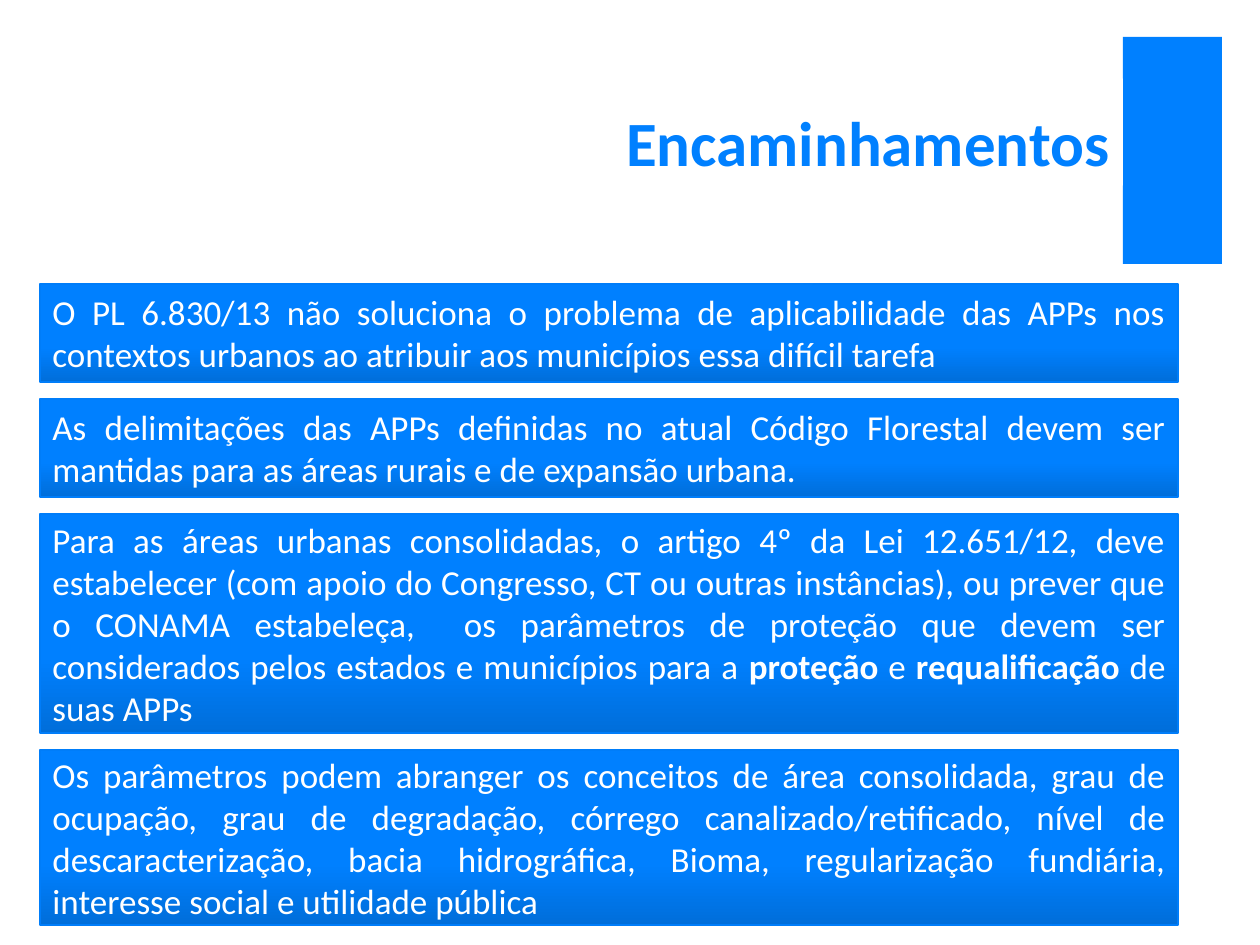
from pptx import Presentation
from pptx.dml.color import RGBColor
from pptx.enum.shapes import MSO_SHAPE
from pptx.enum.text import MSO_ANCHOR, PP_ALIGN
from pptx.util import Emu, Pt

RECT = MSO_SHAPE.RECTANGLE
BOTTOM, MIDDLE = MSO_ANCHOR.BOTTOM, MSO_ANCHOR.MIDDLE
RIGHT, JUSTIFY = PP_ALIGN.RIGHT, PP_ALIGN.JUSTIFY

BLUE = RGBColor(0x00, 0x80, 0xFF)
DARK_BLUE = RGBColor(0x00, 0x6E, 0xDA)
EDGE_BLUE = RGBColor(0x00, 0x7D, 0xF9)
WHITE = RGBColor(0xFF, 0xFF, 0xFF)

TITLE = "Encaminhamentos"
STATEMENTS = [
    (98, [("O PL 6.830/13 não soluciona o problema de aplicabilidade das APPs nos "
           "contextos urbanos ao atribuir aos municípios essa difícil tarefa", False)]),
    (98, [("As delimitações das APPs definidas no atual Código Florestal devem ser "
           "mantidas para as áreas rurais e de expansão urbana. ", False)]),
    (219, [("Para as áreas urbanas consolidadas, o artigo 4º da Lei 12.651/12, deve "
            "estabelecer (com apoio do Congresso, CT ou outras instâncias), ou prever que "
            "o CONAMA estabeleça,  os parâmetros de proteção que devem ser considerados "
            "pelos estados e municípios para a ", False),
           ("proteção", True),
           (" e ", False),
           ("requalificação", True),
           (" de suas APPs", False)]),
    (175, [("Os parâmetros podem abranger os conceitos de área consolidada, grau de "
            "ocupação, grau de degradação, córrego canalizado/retificado, nível de "
            "descaracterização, bacia hidrográfica, Bioma, regularização fundiária, "
            "interesse social e utilidade pública", False)]),
]
LEFT, TOP, WIDTH, GAP = 40, 284, 1138, 17


def px(n):
    return Emu(round(n * 914400 / 126))


def add_box(slide, x, y, w, h):
    sp = slide.shapes.add_shape(RECT, px(x), px(y), px(w), px(h))
    sp.shadow.inherit = False
    return sp


def add_text(sp, runs, size, color, align, anchor):
    tf = sp.text_frame
    tf.word_wrap = True
    tf.vertical_anchor = anchor
    p = tf.paragraphs[0]
    p.alignment = align
    for text, bold in runs:
        r = p.add_run()
        r.text = text
        r.font.name = "Calibri"
        r.font.size = Pt(size)
        r.font.bold = bold
        r.font.color.rgb = color


def shade(sp):
    sp.fill.gradient()
    sp.fill.gradient_angle = 90
    stops = sp.fill.gradient_stops
    for stop, position, color in zip(stops, (0, 0.35), (DARK_BLUE, BLUE)):
        stop.position = position
        stop.color.rgb = color
    sp.line.color.rgb = EDGE_BLUE
    sp.line.width = Pt(1)


def main():
    prs = Presentation()
    prs.slide_width, prs.slide_height = px(1260), px(945)
    slide = prs.slides.add_slide(prs.slide_layouts[6])

    accent = add_box(slide, 1123, 37, 99, 227)
    accent.fill.solid()
    accent.fill.fore_color.rgb = BLUE
    accent.line.fill.background()

    title = add_box(slide, 373, 79, 749, 106)
    title.fill.solid()
    title.fill.fore_color.rgb = WHITE
    title.line.color.rgb = WHITE
    title.line.width = Pt(0.75)
    add_text(title, [(TITLE, True)], size=36, color=BLUE, align=RIGHT, anchor=BOTTOM)

    y = TOP
    for height, runs in STATEMENTS:
        sp = add_box(slide, LEFT, y, WIDTH, height)
        shade(sp)
        add_text(sp, runs, size=20, color=WHITE, align=JUSTIFY, anchor=MIDDLE)
        y += height + GAP

    prs.save("out.pptx")


if __name__ == "__main__":
    main()
